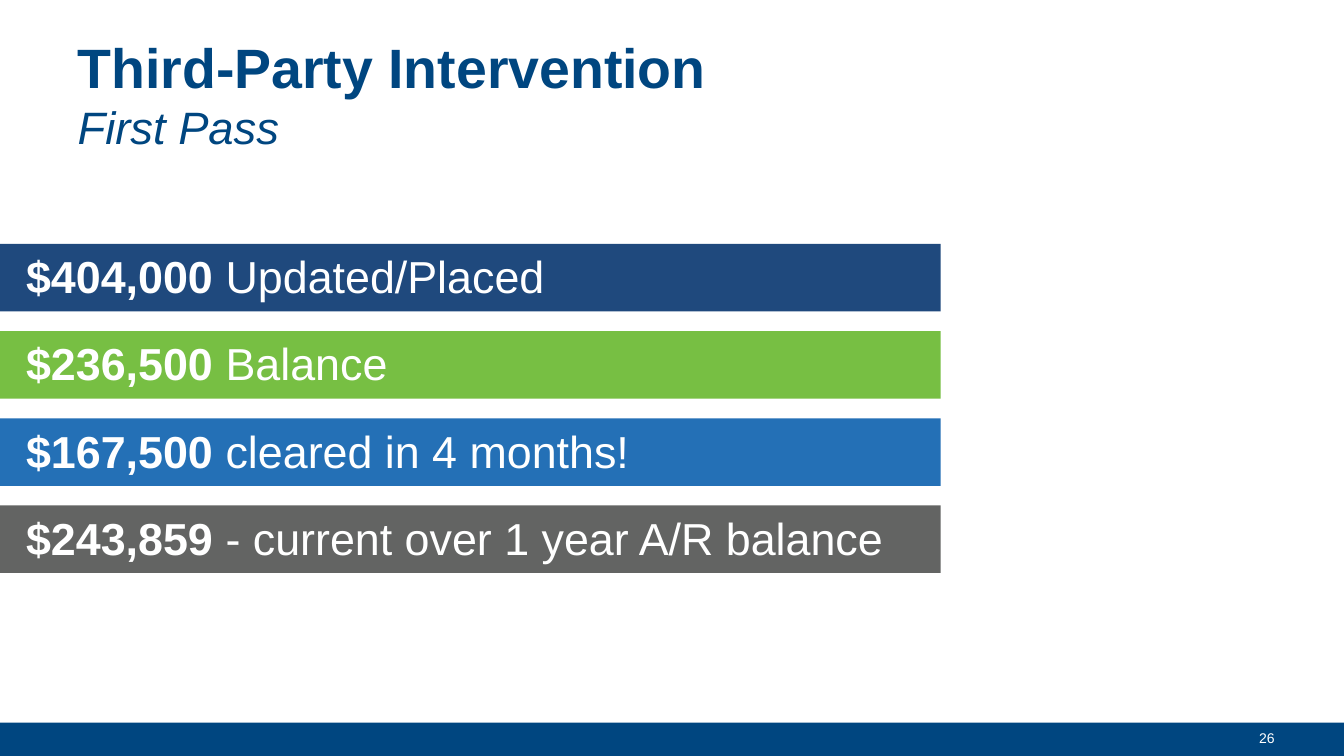
import pptx
import pptx.util
import pptx.dml.color
import pptx.enum.shapes
import pptx.enum.text

Inches = pptx.util.Inches
RGBColor = pptx.dml.color.RGBColor
Anchor = pptx.enum.text.MSO_ANCHOR
Align = pptx.enum.text.PP_ALIGN
AutoSize = pptx.enum.text.MSO_AUTO_SIZE

NAVY = RGBColor(0x00, 0x46, 0x80)
INDIGO = RGBColor(0x1F, 0x49, 0x7D)
GREEN = RGBColor(0x77, 0xBF, 0x43)
BLUE = RGBColor(0x24, 0x70, 0xB6)
GRAY = RGBColor(0x63, 0x64, 0x63)
WHITE = RGBColor(0xFF, 0xFF, 0xFF)

TITLE = "Third-Party Intervention"
SUBTITLE = "First Pass"
PAGE_NUMBER = "26"
BARS = [
    ("$404,000", " Updated/Placed", INDIGO, 7.75),
    ("$236,500", " Balance", GREEN, 7.75),
    ("$167,500", " cleared in 4 months!", BLUE, 7.75),
    ("$243,859", " - current over 1 year A/R balance", GRAY, 9),
]

WIDTH, HEIGHT = 13.33, 7.5
FOOTER_HEIGHT = 0.33
BAR_LEFT, BAR_TOP, BAR_WIDTH, BAR_HEIGHT = -0.09, 2.42, 9.42, 0.67
BAR_PITCH = 0.865
LABEL_LEFT, LABEL_HEIGHT = 0.16, 0.64


def add_bar(shapes, left, top, width, height, color):
    bar = shapes.add_shape(
        pptx.enum.shapes.MSO_SHAPE.RECTANGLE,
        Inches(left), Inches(top), Inches(width), Inches(height))
    bar.shadow.inherit = False
    bar.fill.solid()
    bar.fill.fore_color.rgb = color
    bar.line.fill.background()


def add_label(shapes, left, top, width, height, wrap=True):
    box = shapes.add_textbox(Inches(left), Inches(top), Inches(width), Inches(height))
    box.text_frame.word_wrap = wrap
    box.text_frame.auto_size = AutoSize.SHAPE_TO_FIT_TEXT
    return box.text_frame.paragraphs[0]


def add_span(para, text, size, color, bold=False, italic=False):
    span = para.add_run()
    span.text = text
    span.font.name = "Arial"
    span.font.size = pptx.util.Pt(size)
    span.font.color.rgb = color
    span.font.bold = bold
    span.font.italic = italic


def main():
    deck = pptx.Presentation()
    deck.slide_width, deck.slide_height = Inches(WIDTH), Inches(HEIGHT)
    page = deck.slides.add_slide(deck.slide_layouts.get_by_name("Title Only"))

    add_bar(page.shapes, 0, HEIGHT - FOOTER_HEIGHT, WIDTH, FOOTER_HEIGHT, NAVY)
    number = add_label(page.shapes, 12.39, 7.19, 0.37, 0.27, wrap=False)
    add_span(number, PAGE_NUMBER, 10, WHITE)

    title = page.shapes.title
    title.left, title.top = Inches(0.67), Inches(0.3)
    title.width, title.height = Inches(12), Inches(1.25)
    frame = title.text_frame
    frame.auto_size = AutoSize.NONE
    frame.vertical_anchor = Anchor.MIDDLE
    heading, subheading = frame.paragraphs[0], frame.add_paragraph()
    heading.alignment = subheading.alignment = Align.LEFT
    add_span(heading, TITLE, 39.6, NAVY, bold=True)
    add_span(subheading, SUBTITLE, 32.4, NAVY, italic=True)

    for row, (amount, note, color, label_width) in enumerate(BARS):
        top = BAR_TOP + row * BAR_PITCH
        group = page.shapes.add_group_shape()
        add_bar(group.shapes, BAR_LEFT, top, BAR_WIDTH, BAR_HEIGHT, color)
        label = add_label(group.shapes, LABEL_LEFT, top, label_width, LABEL_HEIGHT)
        add_span(label, amount, 32, WHITE, bold=True)
        add_span(label, note, 32, WHITE)

    deck.save("out.pptx")


if __name__ == "__main__":
    main()
